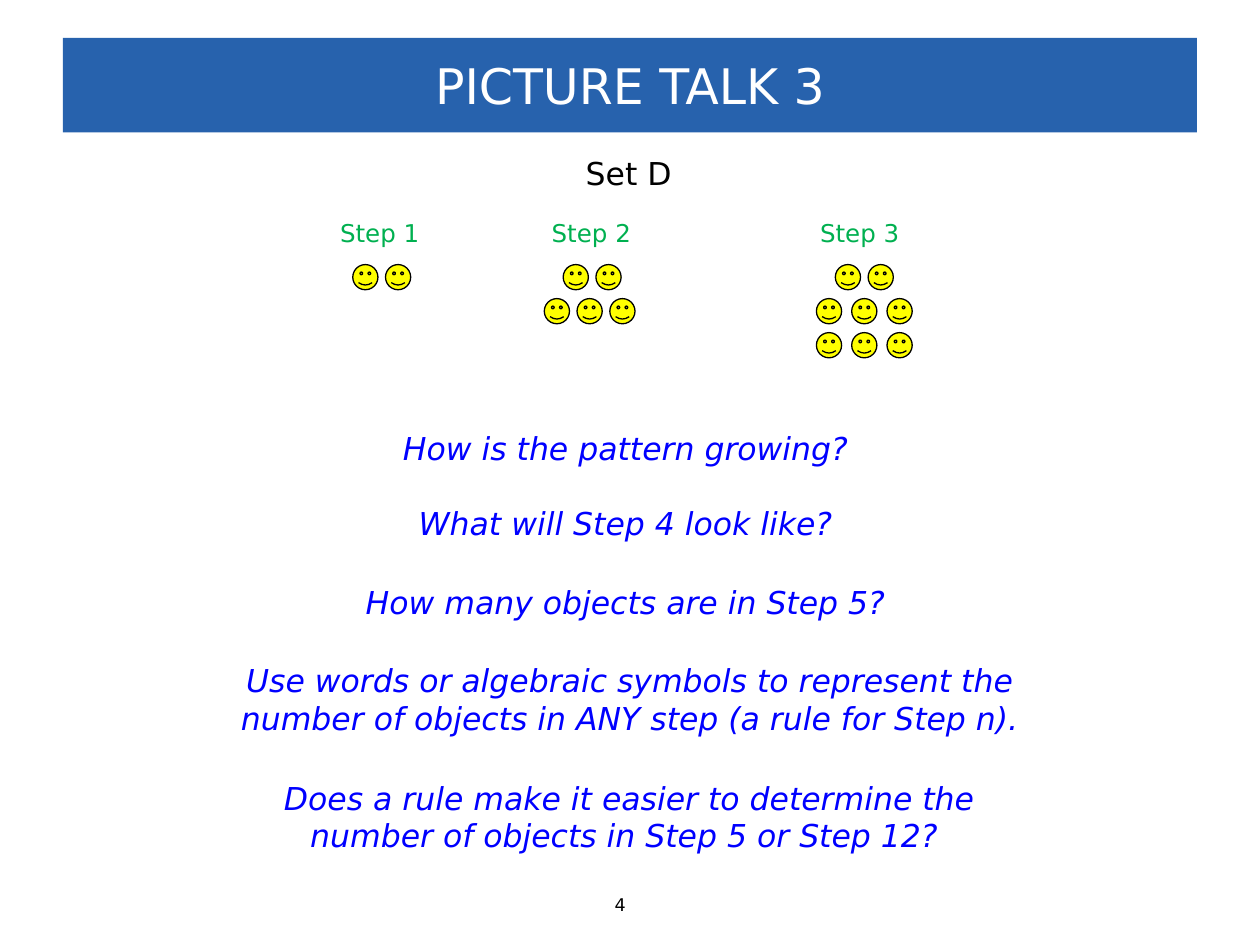
from pptx import Presentation
from pptx.dml.color import RGBColor
from pptx.enum.shapes import MSO_SHAPE
from pptx.enum.text import MSO_ANCHOR, MSO_AUTO_SIZE, PP_ALIGN
from pptx.util import Inches, Pt

FONT = "DejaVu Sans"
QUESTIONS = [
    ("How is the pattern growing? ", 2.97, 3.36, 4.07, 0.4),
    ("What will Step 4 look like? ", 3.11, 3.95, 3.79, 0.4),
    ("How many objects are in Step 5? ", 2.77, 4.58, 4.47, 0.4),
    ("Use words or algebraic symbols to represent the number of objects "
     "in ANY step (a rule for Step n).", 1.65, 5.2, 6.7, 0.71),
    ("Does a rule make it easier to determine the number of objects "
     "in Step 5 or Step 12? ", 2.08, 6.13, 5.83, 0.71),
]
STEPS = [
    ("Step 1", 2.6, [(2.8, 2, 0.26)]),
    ("Step 2", 4.28, [(4.47, 2, 0.26), (4.32, 3, 0.26)]),
    ("Step 3", 6.41, [(6.63, 2, 0.26), (6.48, 3, 0.28), (6.48, 3, 0.28)]),
]


def color(code):
    return RGBColor.from_string(code)


def write(frame, text, size=18, tint="000000", align=PP_ALIGN.LEFT,
          italic=False, wrap=True):
    frame.word_wrap = wrap
    para = frame.paragraphs[0]
    para.alignment = align
    run = para.add_run()
    run.text = text
    font = run.font
    font.name = FONT
    font.size = Pt(size)
    font.italic = italic
    font.color.rgb = color(tint)


def label(slide, text, left, top, width, height, **style):
    box = slide.shapes.add_textbox(
        Inches(left), Inches(top), Inches(width), Inches(height))
    write(box.text_frame, text, **style)
    box.text_frame.auto_size = MSO_AUTO_SIZE.SHAPE_TO_FIT_TEXT


def shape(slide, kind, left, top, width, height, fill):
    item = slide.shapes.add_shape(
        kind, Inches(left), Inches(top), Inches(width), Inches(height))
    item.shadow.inherit = False
    item.fill.solid()
    item.fill.fore_color.rgb = color(fill)
    return item


def banner(slide, text):
    bar = shape(slide, MSO_SHAPE.RECTANGLE, 0.5, 0.3, 9, 0.75, "2762AD")
    bar.line.fill.background()
    bar.text_frame.vertical_anchor = MSO_ANCHOR.MIDDLE
    write(bar.text_frame, text, size=28, tint="FFFFFF", align=PP_ALIGN.CENTER)


def smiley(slide, left, top):
    face = shape(slide, MSO_SHAPE.SMILEY_FACE, left, top, 0.2, 0.2, "FFFF00")
    face.line.color.rgb = color("000000")
    face.line.width = Pt(0.75)


def step(slide, name, left, rows):
    label(slide, name, left, 1.68, 0.88, 0.34, size=14, tint="00B050")
    for row, (start, count, pitch) in enumerate(rows):
        for col in range(count):
            smiley(slide, start + col * pitch, 2.1 + row * 0.27)


def main():
    deck = Presentation()
    deck.slide_width = Inches(10)
    deck.slide_height = Inches(7.5)
    slide = deck.slides.add_slide(deck.slide_layouts[6])
    label(slide, "4", 4.78, 7.05, 0.44, 0.27, size=10, wrap=False)
    banner(slide, "PICTURE TALK 3")
    label(slide, "Set D", 4.55, 1.17, 0.91, 0.4, wrap=False)
    for text, *place in QUESTIONS:
        label(slide, text, *place, tint="0000FF", italic=True,
              align=PP_ALIGN.CENTER)
    for name, left, rows in STEPS:
        step(slide, name, left, rows)
    deck.save("out.pptx")


if __name__ == "__main__":
    main()
